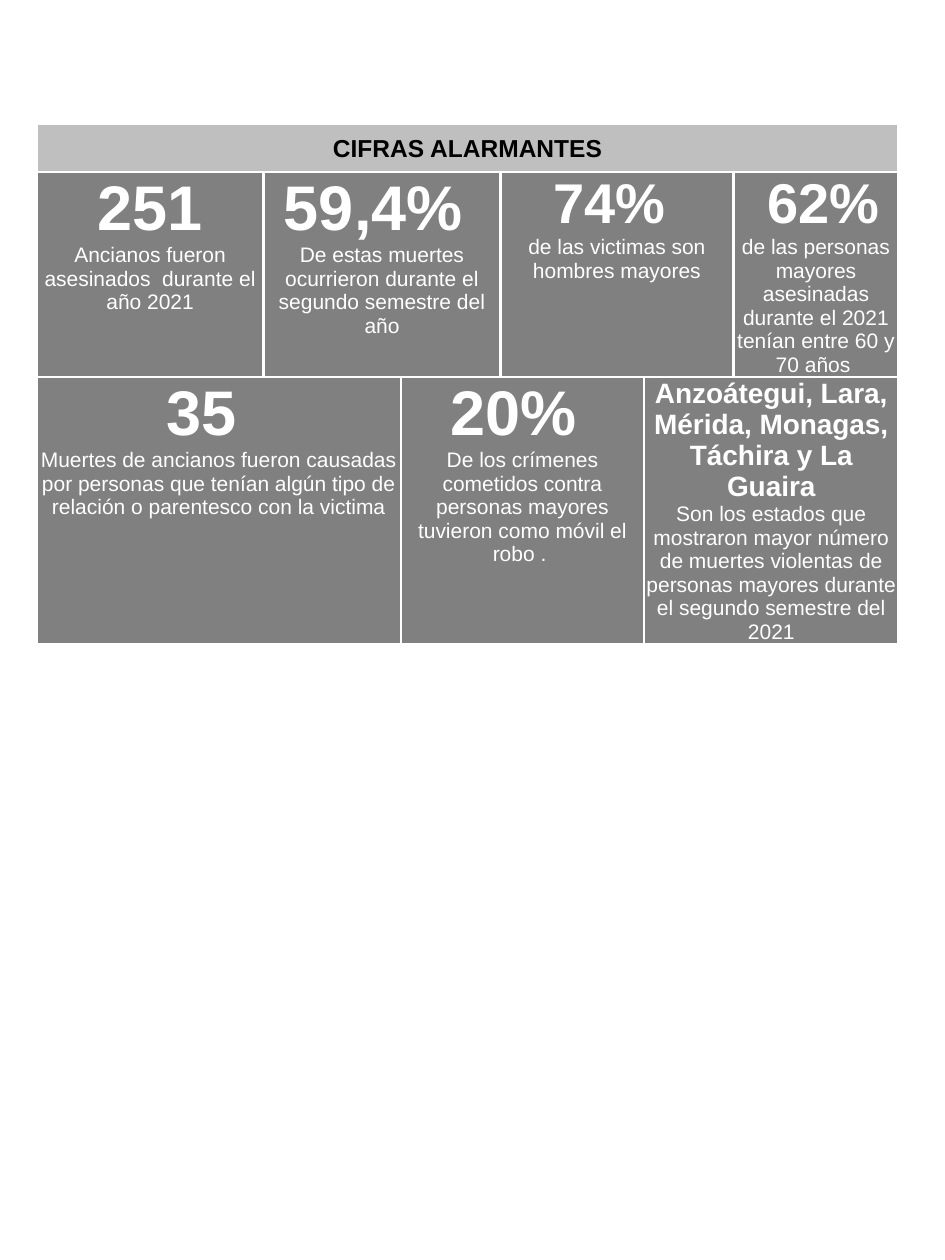
from lxml.etree import SubElement
from pptx import Presentation
from pptx.dml.color import RGBColor
from pptx.enum.text import MSO_ANCHOR, PP_ALIGN
from pptx.oxml.ns import qn
from pptx.util import Pt

CENTER, MIDDLE = PP_ALIGN.CENTER, MSO_ANCHOR.MIDDLE
FONT = "Arial"
WHITE, BLACK, LIGHT, GREY = "FFFFFF", "000000", "BFBFBF", "808080"

TITLE = "CIFRAS ALARMANTES"
# Each fact: columns spanned, figure, figure size, text
FACTS = [
    [
        (1, "251", 36, "Ancianos fueron asesinados  durante el año 2021"),
        (2, "59,4% ", 36,
         "De estas muertes ocurrieron durante el segundo semestre del año"),
        (2, "74% ", 32, "de las victimas son hombres mayores"),
        (1, " 62%", 32, "de las personas mayores asesinadas durante el 2021 "
         "tenían entre 60 y 70 años "),
    ],
    [
        (2, "35  ", 36, "Muertes de ancianos fueron causadas por personas que "
         "tenían algún tipo de relación o parentesco con la victima"),
        (2, "20% ", 36, "De los crímenes cometidos contra personas mayores "
         "tuvieron como móvil el robo . "),
        (2, "Anzoátegui, Lara, Mérida, Monagas, Táchira y La Guaira", 16,
         "Son los estados que mostraron mayor número de muertes violentas de "
         "personas mayores durante el segundo semestre del 2021"),
    ],
]
COLS = [129.6, 78.5, 56.9, 82.1, 51.1, 94.3]
ROWS = [27.4, 95.8, 109.4]
LEFT, TOP, HEIGHT = 21, 70.8, 316.8


def paint(fill, color):
    fill.solid()
    fill.fore_color.rgb = RGBColor.from_string(color)


def edge(cell):
    """Draw white borders; must come before the cell's fill."""
    props = cell._tc.get_or_add_tcPr()
    for side in ("lnL", "lnR", "lnT", "lnB"):
        line = SubElement(props, qn(f"a:{side}"), w=str(Pt(1.5)))
        solid = SubElement(line, qn("a:solidFill"))
        SubElement(solid, qn("a:srgbClr"), val=WHITE)


def write(cell, parts, color):
    """Set (text, size, bold) parts in one paragraph, one part a line."""
    para = cell.text_frame.paragraphs[0]
    para.text = "\v".join(text for text, _, _ in parts)
    para.alignment = CENTER
    for run, (_, size, bold) in zip(para.runs, parts):
        font = run.font
        font.name, font.size, font.bold = FONT, Pt(size), bold
        font.color.rgb = RGBColor.from_string(color)
    for gap in para._p.findall(qn("a:br")):
        SubElement(gap, qn("a:rPr"), sz=str(parts[0][1] * 100))


prs = Presentation()
prs.slide_width, prs.slide_height = Pt(540), Pt(720)
slide = prs.slides.add_slide(prs.slide_layouts[6])
frame = slide.shapes.add_table(len(ROWS), len(COLS), Pt(LEFT), Pt(TOP),
                               Pt(sum(COLS)), Pt(HEIGHT))
table = frame.table
for col, width in zip(table.columns, COLS):
    col.width = Pt(width)
for row, height in zip(table.rows, ROWS):
    row.height = Pt(height)
frame.height = Pt(HEIGHT)

for r in range(len(ROWS)):
    for c in range(len(COLS)):
        cell = table.cell(r, c)
        cell.margin_left = cell.margin_right = cell.margin_top = Pt(0.7)
        cell.margin_bottom = 0
        edge(cell)
        paint(cell.fill, GREY if r else LIGHT)

head = table.cell(0, 0)
head.merge(table.cell(0, len(COLS) - 1))
head.vertical_anchor = MIDDLE
write(head, [(TITLE, 14, True)], BLACK)

for r, facts in enumerate(FACTS, 1):
    c = 0
    for span, figure, size, text in facts:
        cell = table.cell(r, c)
        if span > 1:
            cell.merge(table.cell(r, c + span - 1))
        write(cell, [(figure, size, True), (text, 12, False)], WHITE)
        c += span

prs.save("out.pptx")
